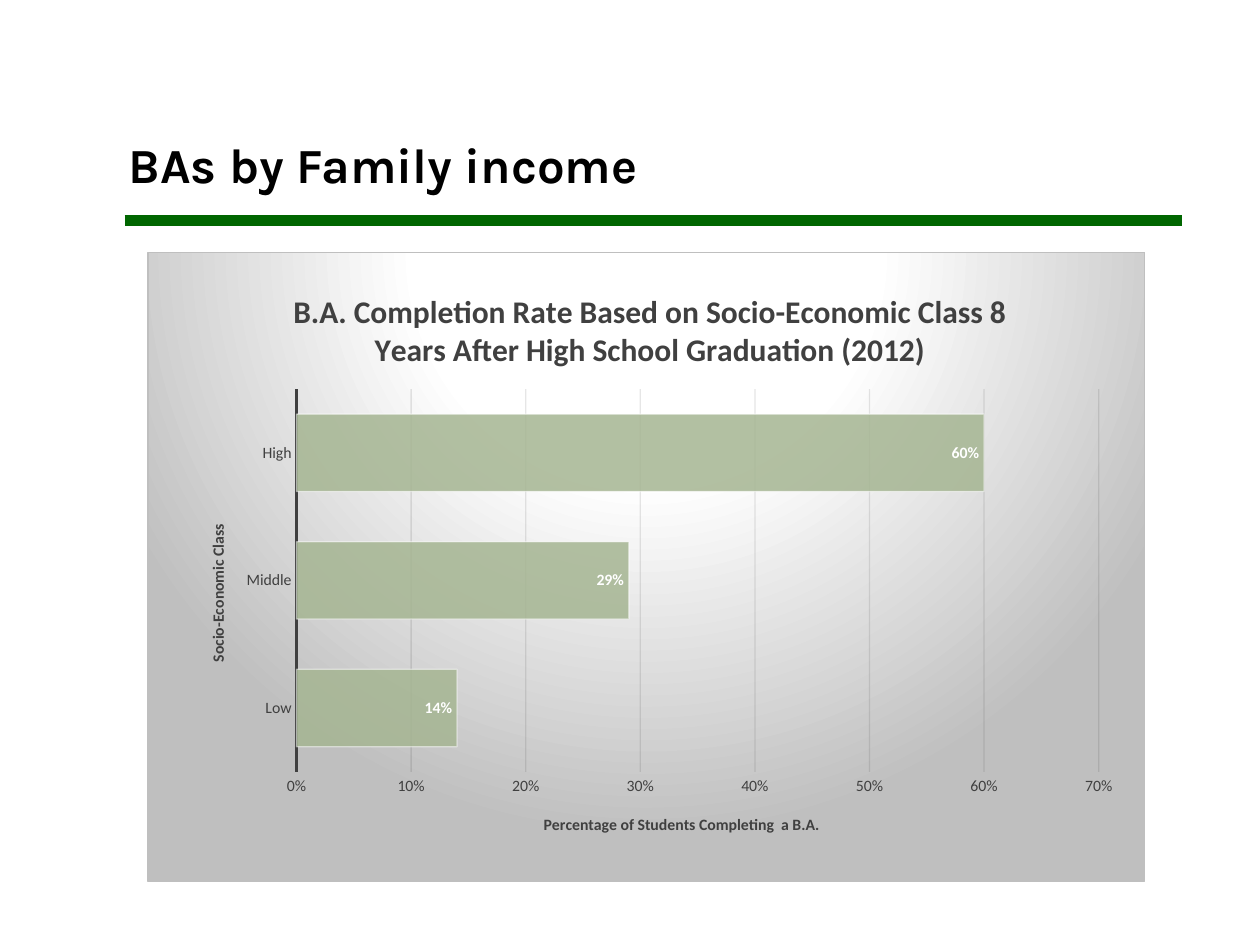
from lxml import etree
from pptx import Presentation
from pptx.chart.data import CategoryChartData
from pptx.dml.color import RGBColor
from pptx.enum.chart import XL_CHART_TYPE as ChartType
from pptx.enum.chart import XL_LABEL_POSITION as LabelPosition
from pptx.enum.chart import XL_TICK_MARK as TickMark
from pptx.enum.shapes import MSO_CONNECTOR as Connector
from pptx.enum.text import MSO_ANCHOR as Anchor, MSO_AUTO_SIZE as AutoSize
from pptx.enum.text import PP_ALIGN as Align
from pptx.oxml import parse_xml
from pptx.oxml.ns import nsdecls, qn
from pptx.util import Inches, Pt

BLACK = RGBColor(0x00, 0x00, 0x00)
WHITE = RGBColor(0xFF, 0xFF, 0xFF)
GREEN = RGBColor(0x00, 0x66, 0x00)
SAGE = RGBColor(0xA5, 0xB5, 0x92)
SILVER = RGBColor(0xBF, 0xBF, 0xBF)
CHARCOAL = RGBColor(0x40, 0x40, 0x40)
GRID = RGBColor(0x0D, 0x0D, 0x0D)

COMPLETION = {"Low": 0.14, "Middle": 0.29, "High": 0.6}


def format_font(font, size, color, name="Calibri", bold=False):
    font.name, font.size, font.bold = name, Pt(size), bold
    font.color.rgb = color


def write_text(frame, text, align=Align.CENTER, spacing=None, **font_format):
    paragraph = frame.paragraphs[0]
    paragraph.alignment = align
    paragraph.line_spacing = spacing
    run = paragraph.add_run()
    run.text = text
    format_font(run.font, **font_format)


def format_line(line, color, width):
    line.color.rgb = color
    line.width = Pt(width)


def fade(element, *opacities):
    """Give the colours inside element, in order, an opacity in percent."""
    for color, percent in zip(element.iter(qn("a:srgbClr")), opacities):
        etree.SubElement(color, qn("a:alpha")).set("val", str(percent * 1000))


def place(element, index, inner=False, **fractions):
    """Set a manual layout, in fractions of the chart area."""
    layout = element.find(qn("c:layout"))
    if layout is None:
        layout = etree.Element(qn("c:layout"))
        element.insert(index, layout)
    manual = etree.SubElement(layout, qn("c:manualLayout"))
    if inner:
        etree.SubElement(manual, qn("c:layoutTarget")).set("val", "inner")
    for mode in ("xMode", "yMode"):
        etree.SubElement(manual, qn(f"c:{mode}")).set("val", "edge")
    for key, value in fractions.items():
        etree.SubElement(manual, qn(f"c:{key}")).set("val", str(value))


def add_chart_title(title, text, size, x, y):
    write_text(title.text_frame, text, size=size, color=CHARCOAL, bold=True)
    place(title._element, 1, x=x, y=y)


def fill_chart_area(chart):
    stops = "".join(
        f'<a:gs pos="{position * 1000}"><a:srgbClr val="{color}"/></a:gs>'
        for position, color in ((0, WHITE), (39, WHITE), (100, SILVER)))
    area = parse_xml(
        f'<c:spPr {nsdecls("c", "a")}><a:gradFill><a:gsLst>{stops}</a:gsLst>'
        '<a:path path="circle"><a:fillToRect l="50000" t="-80000" '
        'r="50000" b="180000"/></a:path></a:gradFill>'
        f'<a:ln w="{Pt(0.75)}"><a:solidFill><a:srgbClr val="{SILVER}"/>'
        '</a:solidFill></a:ln></c:spPr>')
    chart._chartSpace.find(qn("c:chart")).addnext(area)


def format_axis(axis, title, x, y):
    axis.major_tick_mark = axis.minor_tick_mark = TickMark.NONE
    format_font(axis.tick_labels.font, 9, CHARCOAL)
    add_chart_title(axis.axis_title, title, 9, x, y)


def format_bars(plot):
    plot.gap_width = 65
    plot.vary_by_categories = False
    bars = plot.series[0]
    bars.format.fill.solid()
    bars.format.fill.fore_color.rgb = SAGE
    format_line(bars.format.line, WHITE, 0.75)
    fade(bars._element, 85, 50)
    labels = bars.data_labels
    labels.show_value = True
    labels.position = LabelPosition.INSIDE_END
    labels.number_format, labels.number_format_is_linked = "0%", False
    format_font(labels.font, 9, WHITE, bold=True)


def add_completion_chart(slide):
    data = CategoryChartData(number_format="0%")
    data.categories = list(COMPLETION)
    data.add_series("Series 1", list(COMPLETION.values()))
    chart = slide.shapes.add_chart(
        ChartType.BAR_CLUSTERED, Inches(1.17), Inches(2),
        Inches(7.92), Inches(5), data).chart
    chart.has_legend = False
    format_font(chart.font, 10, BLACK)
    fill_chart_area(chart)
    add_chart_title(
        chart.chart_title,
        "B.A. Completion Rate Based on Socio-Economic Class 8 "
        "Years After High School Graduation (2012)", 18, 0.14, 0.05)
    place(chart._chartSpace.chart.plotArea, 0, inner=True,
          x=0.149, y=0.217, w=0.805, h=0.609)

    # Axes
    classes, share = chart.category_axis, chart.value_axis
    format_axis(classes, "Socio-Economic Class", 0.057, 0.427)
    format_line(classes.format.line, CHARCOAL, 1.5)
    format_axis(share, "Percentage of Students Completing  a B.A.", 0.394, 0.888)
    share.format.line.fill.background()
    share.minimum_scale, share.maximum_scale, share.major_unit = 0, 0.7, 0.1
    share.tick_labels.number_format = "0%"
    share.tick_labels.number_format_is_linked = False
    format_line(share.major_gridlines.format.line, GRID, 0.75)
    fade(share._element.find(qn("c:majorGridlines")), 10)

    format_bars(chart.plots[0])


def add_rule(slide):
    rule = slide.shapes.add_connector(
        Connector.STRAIGHT, Inches(0.99), Inches(1.75), Inches(9.38), Inches(1.75))
    format_line(rule.line, GREEN, 6)
    etree.SubElement(rule._element.spPr, qn("a:effectLst"))


def add_title(slide, text):
    title = slide.shapes.title
    title.left, title.top = Inches(0.92), Inches(0.92)
    title.width, title.height = Inches(4.58), Inches(0.67)
    frame = title.text_frame
    frame.auto_size = AutoSize.NONE
    frame.vertical_anchor = Anchor.BOTTOM
    write_text(frame, text, align=Align.LEFT, spacing=0.9,
               size=28, color=BLACK, name="Karla", bold=True)


def main():
    deck = Presentation()
    deck.slide_width, deck.slide_height = Inches(10), Inches(7.5)
    slide = deck.slides.add_slide(deck.slide_layouts[5])
    add_title(slide, "BAs by Family income")
    add_rule(slide)
    add_completion_chart(slide)
    deck.save("out.pptx")


if __name__ == "__main__":
    main()
